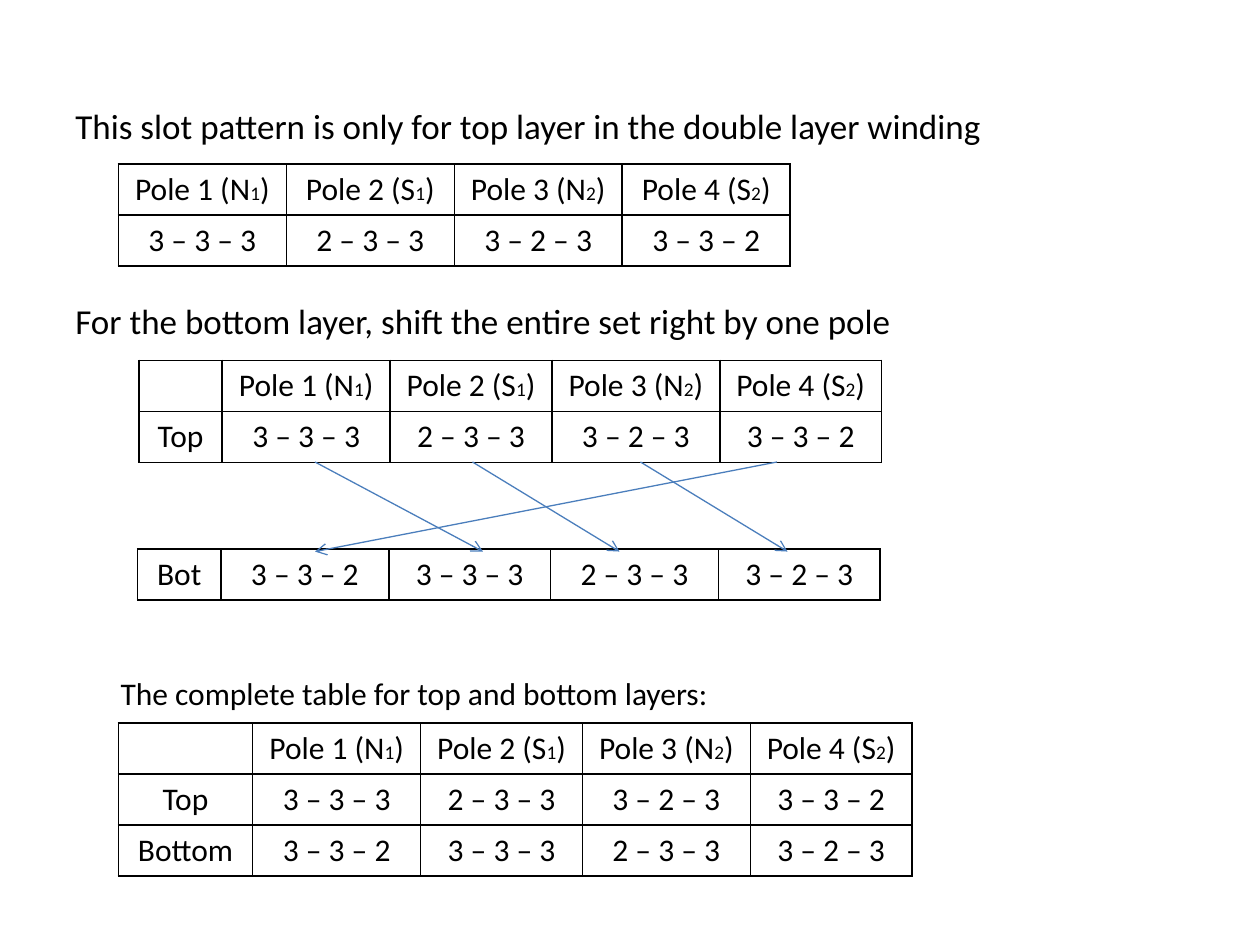
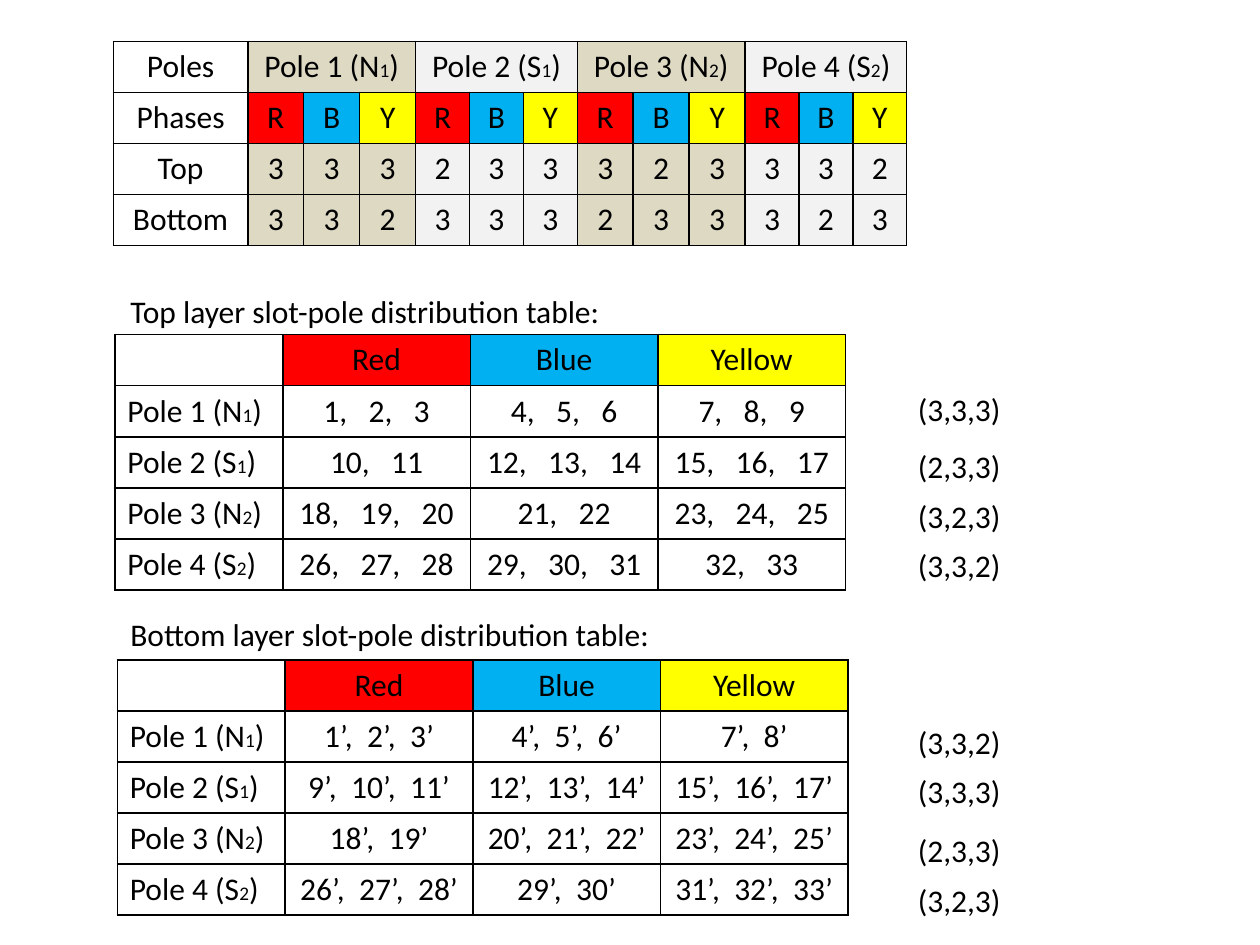
from lxml import etree
from pptx import Presentation
from pptx.dml.color import RGBColor
from pptx.enum.shapes import MSO_CONNECTOR
from pptx.enum.text import MSO_AUTO_SIZE, PP_ALIGN
from pptx.oxml.ns import qn
from pptx.util import Pt

STRAIGHT = MSO_CONNECTOR.STRAIGHT
GROW = MSO_AUTO_SIZE.SHAPE_TO_FIT_TEXT
LEFT, CENTER = PP_ALIGN.LEFT, PP_ALIGN.CENTER

FONT = "Calibri"
BLACK, ARROW_BLUE = "000000", "4B7EBC"
PHASES = {"Red": "FF0000", "Blue": "00B0F0", "Yellow": "FFFF00"}
PHASE_LETTERS = ["R", "B", "Y"]
POLE_FILLS = ["DDD9C3", "F2F2F2"]

ROW_HEIGHT = 29.2
NORTH_WIDTH, SOUTH_WIDTH = 96, 92.4
POLE_WIDTHS = [NORTH_WIDTH, SOUTH_WIDTH] * 2

# Slots per phase in each pole; the bottom layer is shifted by one pole
TOP = [(3, 3, 3), (2, 3, 3), (3, 2, 3), (3, 3, 2)]
BOTTOM = TOP[-1:] + TOP[:-1]


def color(hex_string):
    return RGBColor.from_string(hex_string)


def write(paragraph, content, size=18, align=LEFT):
    """Write a string, or a list of (text, format) pieces."""
    paragraph.alignment = align
    pieces = [(content, {})] if isinstance(content, str) else content
    for text, style in pieces:
        run = paragraph.add_run()
        run.text = text
        run.font.name = FONT
        run.font.size = Pt(style.get("size", size))
        run.font.color.rgb = color(BLACK)
        if "spacing" in style:
            run.font._element.set("spc", str(round(style["spacing"] * 100)))


def pole_name(number, letter, index):
    return [(f"Pole {number} ({letter}", {}), (str(index), {"size": 11}), (")", {})]


POLES = [pole_name(1, "N", 1), pole_name(2, "S", 1),
         pole_name(3, "N", 2), pole_name(4, "S", 2)]


def patterns(layer):
    return [" – ".join(map(str, counts)) for counts in layer]


def slot_rows(layer, mark, gap):
    """Number the slots in order, with a widened space after each comma."""
    rows, slot = [], 1
    for pole, counts in zip(POLES, layer):
        row = [pole]
        for count in counts:
            pieces = []
            for number in range(slot, slot + count):
                if pieces:
                    pieces += [(",", {}), (" ", {"spacing": gap})]
                pieces.append((f"{number}{mark}", {}))
            row.append(pieces)
            slot += count
        rows.append(row)
    return rows


class Deck:
    def __init__(self):
        self.presentation = Presentation()
        self.presentation.slide_width = Pt(720)
        self.presentation.slide_height = Pt(540)
        self.slide = None

    def add_slide(self):
        blank_layout = self.presentation.slide_layouts[6]
        self.slide = self.presentation.slides.add_slide(blank_layout)

    def text(self, content, left, top, width, height=28.8):
        shape = self.slide.shapes.add_textbox(Pt(left), Pt(top), Pt(width), Pt(height))
        shape.text_frame.word_wrap = False
        shape.text_frame.auto_size = GROW
        write(shape.text_frame.paragraphs[0], content)

    def statements(self, lines, left, top, width, height, gap):
        shape = self.slide.shapes.add_textbox(Pt(left), Pt(top), Pt(width), Pt(height))
        frame = shape.text_frame
        frame.word_wrap = True
        for index, line in enumerate(lines):
            paragraph = frame.add_paragraph() if index else frame.paragraphs[0]
            if index:
                paragraph.space_before = Pt(gap)
            write(paragraph, line, size=20)

    def table(self, rows, left, top, widths, fills=None, first_align=CENTER):
        fills = fills or {}
        frame = self.slide.shapes.add_table(
            len(rows), len(widths), Pt(left), Pt(top),
            Pt(sum(widths)), Pt(ROW_HEIGHT * len(rows)))
        table = frame.table
        table.first_row = table.horz_banding = False
        for column, width in zip(table.columns, widths):
            column.width = Pt(width)
        for row_index, row in enumerate(rows):
            table.rows[row_index].height = Pt(ROW_HEIGHT)
            for column_index, content in enumerate(row):
                cell = table.cell(row_index, column_index)
                self.format_cell(cell, fills.get((row_index, column_index)))
                if content:
                    align = CENTER if column_index else first_align
                    write(cell.text_frame.paragraphs[0], content, align=align)
        return table

    def format_cell(self, cell, fill):
        if fill:
            cell.fill.solid()
            cell.fill.fore_color.rgb = color(fill)
        else:
            cell.fill.background()
        properties = cell._tc.get_or_add_tcPr()
        for index, side in enumerate(("a:lnL", "a:lnR", "a:lnT", "a:lnB")):
            line = etree.Element(qn(side), w=str(Pt(1)))
            solid = etree.SubElement(line, qn("a:solidFill"))
            etree.SubElement(solid, qn("a:srgbClr"), val=BLACK)
            properties.insert(index, line)

    def arrow(self, start_x, start_y, end_x, end_y):
        connector = self.slide.shapes.add_connector(
            STRAIGHT, Pt(start_x), Pt(start_y), Pt(end_x), Pt(end_y))
        connector.line.color.rgb = color(ARROW_BLUE)
        connector.line.width = Pt(0.75)
        etree.SubElement(connector.line._get_or_add_ln(), qn("a:tailEnd"), type="arrow")
        etree.SubElement(connector._element.spPr, qn("a:effectLst"))


def build_layer_shift(deck):
    deck.add_slide()
    deck.statements(
        ["This slot pattern is only for top layer in the double layer winding",
         "For the bottom layer, shift the entire set right by one pole"],
        36, 56.2, 648, 466.6, gap=87.6)

    # Top layer alone
    deck.table([POLES, patterns(TOP)], 67.6, 93.6, [NORTH_WIDTH] * 4)

    # Shift from top to bottom
    shift_widths = [47.6] + POLE_WIDTHS
    deck.table([[""] + POLES, ["Top"] + patterns(TOP)], 79.4, 206, shift_widths)
    deck.table([["Bot"] + patterns(BOTTOM)], 78.6, 313.8, shift_widths)
    for start_x, end_x in [(444, 180), (180, 276), (270, 354), (366, 450)]:
        deck.arrow(start_x, 264, end_x, 315.2)

    # Both layers
    deck.text("The complete table for top and bottom layers:", 61.8, 381.6, 354.2)
    deck.table([[""] + POLES, ["Top"] + patterns(TOP), ["Bottom"] + patterns(BOTTOM)],
               67.6, 413, [76.8] + POLE_WIDTHS)


def build_distribution(deck):
    deck.add_slide()

    # Slots by pole and phase
    header = ["Poles"]
    for pole in POLES:
        header += [pole, "", ""]
    rows = [header, ["Phases"] + PHASE_LETTERS * 4]
    for name, layer in [("Top", TOP), ("Bottom", BOTTOM)]:
        rows.append([name] + [str(count) for counts in layer for count in counts])
    fills = {}
    phase_fills = list(PHASES.values())
    for column in range(12):
        for row in (0, 2, 3):
            fills[row, column + 1] = POLE_FILLS[column // 3 % 2]
        fills[1, column + 1] = phase_fills[column % 3]
    widths = [76.8] + [width / 3 for width in POLE_WIDTHS for _ in range(3)]
    table = deck.table(rows, 64.8, 23.6, widths, fills)
    for column in range(1, 13, 3):
        table.cell(0, column).merge(table.cell(0, column + 2))

    # Slot numbers of each layer, with the counts beside each pole
    phase_header = {(0, index): fill for index, fill in enumerate(phase_fills, 1)}
    layers = [
        ("Top", TOP, "", 8.1, 163.4, 286.6, 65.6, 191.2, [219.6, 252, 280.4, 308.4]),
        ("Bottom", BOTTOM, "’", 4.1, 347.8, 315.4, 67, 377, [409.6, 437.8, 471.6, 499.8]),
    ]
    for name, layer, mark, gap, title_top, title_width, left, top, count_tops in layers:
        deck.text(f"{name} layer slot-pole distribution table:", 67.4, title_top, title_width)
        deck.table([[""] + list(PHASES)] + slot_rows(layer, mark, gap), left, top,
                   [NORTH_WIDTH] + [107.2] * 3, phase_header, first_align=LEFT)
        for counts, count_top in zip(layer, count_tops):
            deck.text(f"({','.join(map(str, counts))})", 517.4, count_top, 62.6)


def main():
    deck = Deck()
    build_layer_shift(deck)
    build_distribution(deck)
    deck.presentation.save("out.pptx")


if __name__ == "__main__":
    main()
